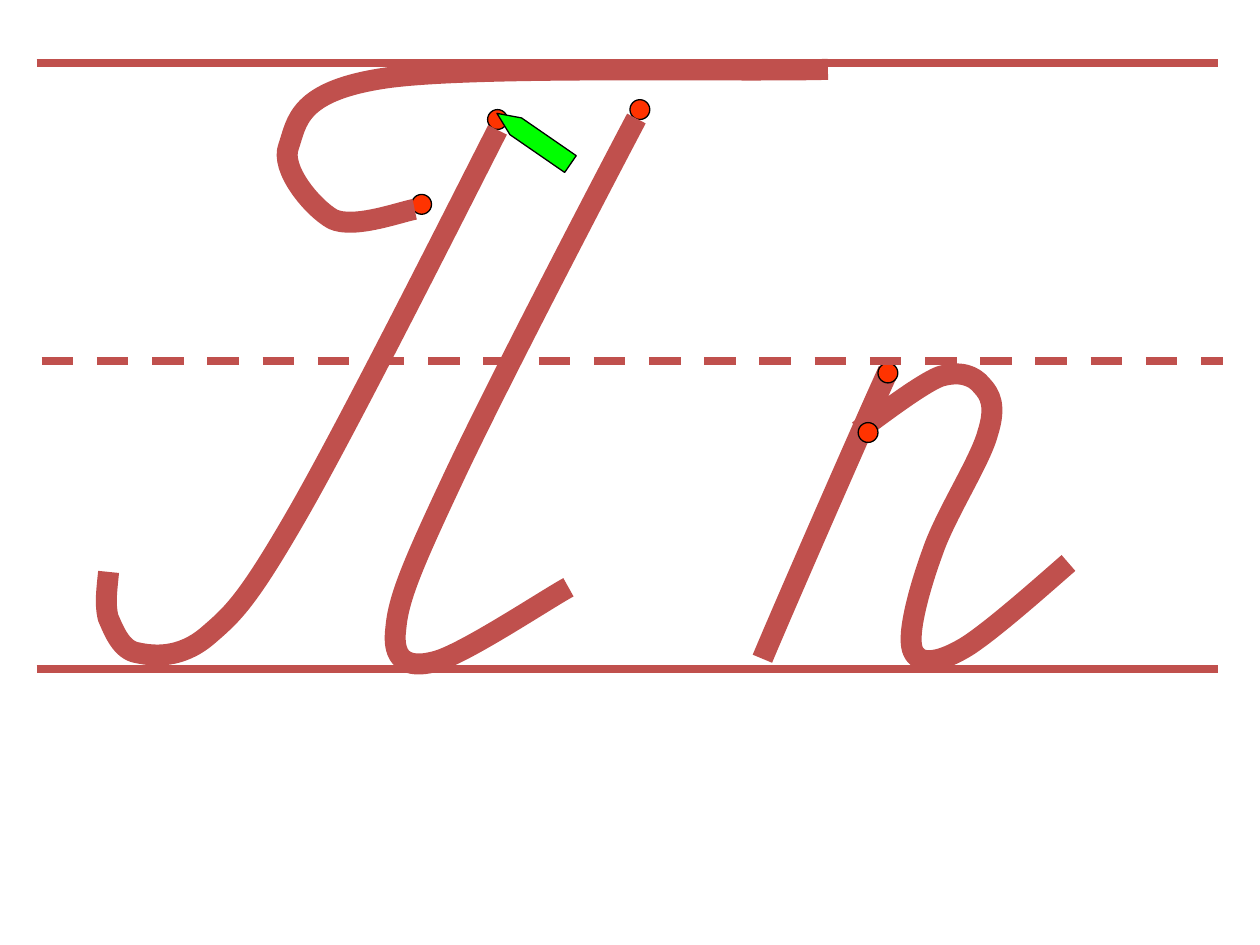
from dataclasses import dataclass

from lxml import etree
from pptx import Presentation
from pptx import util as u
from pptx.dml.color import RGBColor
from pptx.enum import dml, shapes
from pptx.oxml import ns


@dataclass(frozen=True)
class Theme:
    ink: str = "C0504D"
    dot: str = "FF3300"
    pencil: str = "00FF00"
    outline: str = "000000"
    stroke_width: float = 12
    ruling_width: float = 4.5
    outline_width: float = 0.75


THEME = Theme()
DOT_SIZE = 0.4
RULING_LENGTH = 23.82

CAPITAL_DOTS = [(10.03, 2.41), (12.9, 2.21), (8.5, 4.12)]
CAPITAL_LEFT = [
    (2.19, 11.53), (2.16, 11.84), (2.11, 12.17), (2.18, 12.45),
    (2.29, 12.7), (2.44, 13.11), (2.77, 13.16),
    (3.1, 13.23), (3.63, 13.28), (4.17, 12.83),
    (4.67, 12.4), (4.95, 12.17), (5.94, 10.46),
    (6.93, 8.76), (9.19, 4.27), (10.03, 2.62),
]
CAPITAL_RIGHT = [
    (11.46, 11.84), (11, 12.09), (9.32, 13.21), (8.76, 13.34),
    (8.18, 13.49), (7.9, 13.28), (7.98, 12.67),
    (8.03, 12.07), (8.31, 11.4), (9.12, 9.68),
    (9.91, 7.98), (12.04, 3.89), (12.83, 2.39),
]
CAPITAL_TOP = [
    (8.36, 4.22), (8.08, 4.27), (7.14, 4.62), (6.71, 4.42),
    (6.3, 4.19), (5.64, 3.4), (5.82, 2.95),
    (5.99, 2.46), (5.99, 1.83), (7.8, 1.57),
    (9.6, 1.32), (14.83, 1.45), (16.69, 1.4),
]
SMALL_STEM = [(15.37, 13.28), (15.77, 12.32), (17.37, 8.66), (17.91, 7.47)]
SMALL_ARCH = [
    (21.54, 11.35), (21.18, 11.66), (19.91, 12.8), (19.41, 13.08),
    (18.87, 13.39), (18.49, 13.41), (18.39, 13.08),
    (18.29, 12.75), (18.54, 11.84), (18.8, 11.13),
    (19.05, 10.39), (19.76, 9.3), (19.91, 8.74),
    (20.09, 8.18), (19.96, 7.95), (19.79, 7.77),
    (19.63, 7.57), (19.35, 7.47), (18.95, 7.59),
    (18.54, 7.75), (17.63, 8.46), (17.3, 8.69),
]
RULINGS = [
    (0.74, 1.27, None),
    (0.84, 7.27, dml.MSO_LINE.DASH),
    (0.74, 13.48, None),
]


def format_line(line, colour, width, dash=None):
    line.color.rgb = RGBColor.from_string(colour)
    formats = {"width": u.Pt(width), "dash_style": dash}
    for name, value in formats.items():
        setattr(line, name, value)


def bend_segments(stroke):
    segments = list(stroke._element.iter(ns.qn("a:lnTo")))
    outline = segments[0].getparent()
    for start in range(0, len(segments), 3):
        curve = etree.SubElement(outline, ns.qn("a:cubicBezTo"))
        for segment in segments[start:start + 3]:
            curve.append(segment[0])
            outline.remove(segment)


def add_stroke(group, controls):
    first, *rest = [(u.Cm(x), u.Cm(y)) for x, y in controls]
    builder = group.shapes.build_freeform(*first)
    builder.add_line_segments(rest, close=False)
    stroke = builder.convert_to_shape()
    bend_segments(stroke)
    stroke.shadow.inherit = False
    stroke.fill.background()
    format_line(stroke.line, THEME.ink, THEME.stroke_width)


def add_filled(parent, kind, left, top, width, height, colour):
    shape = parent.shapes.add_shape(kind, u.Cm(left), u.Cm(top), u.Cm(width), u.Cm(height))
    shape.shadow.inherit = False
    shape.fill.solid()
    shape.fill.fore_color.rgb = RGBColor.from_string(colour)
    format_line(shape.line, THEME.outline, THEME.outline_width)
    return shape


def add_dot(group, x, y):
    add_filled(group, shapes.MSO_SHAPE.FLOWCHART_CONNECTOR,
               x - DOT_SIZE / 2, y - DOT_SIZE / 2, DOT_SIZE, DOT_SIZE, THEME.dot)


def add_ruling(group, left, y, dash):
    ruling = group.shapes.add_connector(
        shapes.MSO_CONNECTOR.STRAIGHT,
        u.Cm(left), u.Cm(y), u.Cm(left + RULING_LENGTH), u.Cm(y))
    format_line(ruling.line, THEME.ink, THEME.ruling_width, dash)
    etree.SubElement(ruling._element.spPr, ns.qn("a:effectLst"))


def add_capital(page):
    group = page.shapes.add_group_shape()
    for centre in CAPITAL_DOTS:
        add_dot(group, *centre)
    for controls in (CAPITAL_LEFT, CAPITAL_RIGHT, CAPITAL_TOP):
        add_stroke(group, controls)


def add_small(page):
    group = page.shapes.add_group_shape()
    for controls, centre in ((SMALL_STEM, (17.9, 7.52)), (SMALL_ARCH, (17.5, 8.72))):
        add_stroke(group, controls)
        add_dot(group, *centre)


def add_rulings(page):
    group = page.shapes.add_group_shape()
    for ruling in RULINGS:
        add_ruling(group, *ruling)


def add_pencil(page):
    pencil = add_filled(page, shapes.MSO_SHAPE.PENTAGON, 9.86, 2.59, 1.8, 0.41, THEME.pencil)
    pencil.adjustments[0] = 1.12
    pencil.rotation = 214.6


def main():
    deck = Presentation()
    deck.slide_width, deck.slide_height = u.Cm(25.4), u.Cm(19.05)
    page = deck.slides.add_slide(deck.slide_layouts[6])
    for draw in (add_capital, add_small, add_rulings, add_pencil):
        draw(page)
    deck.save("out.pptx")


if __name__ == "__main__":
    main()
